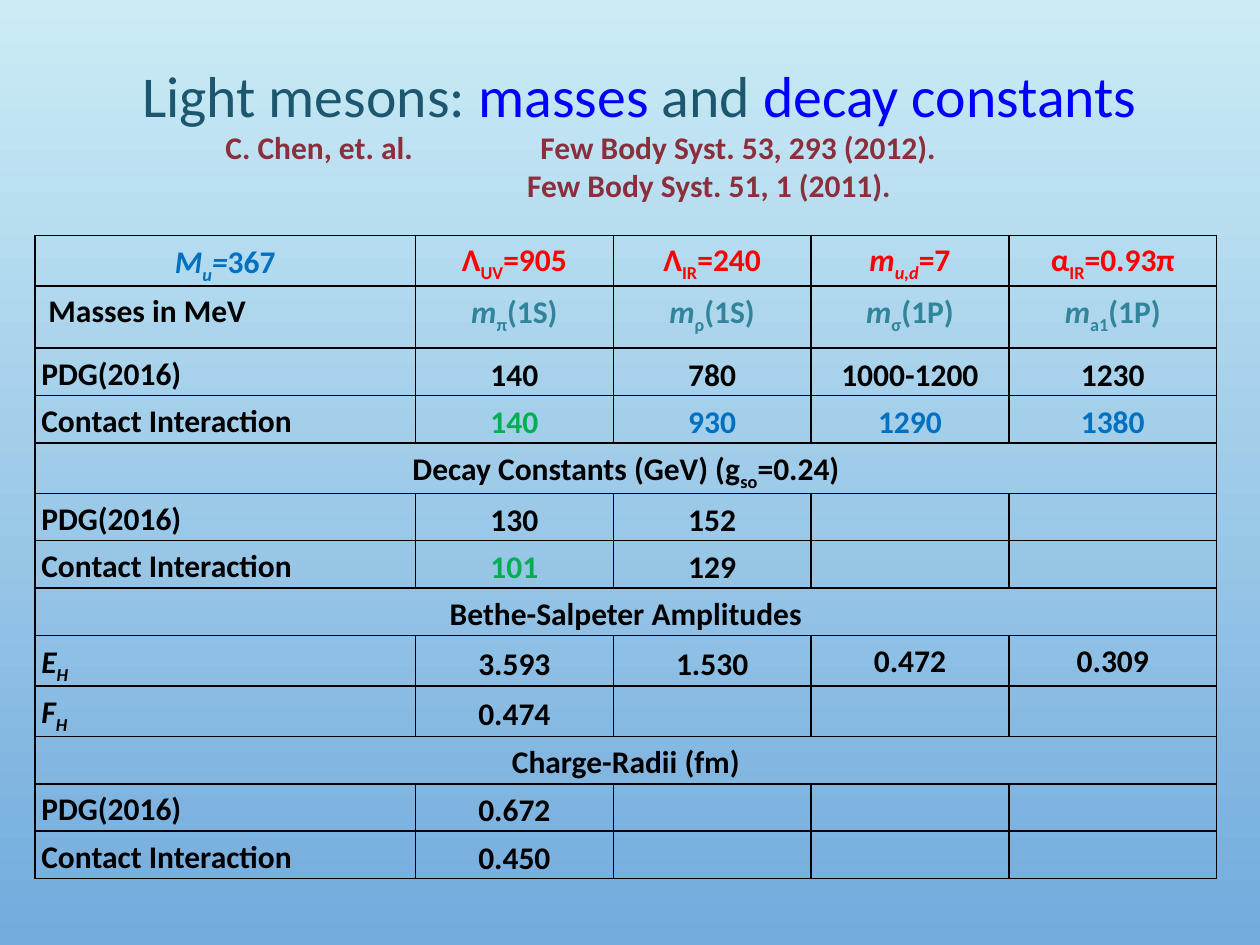
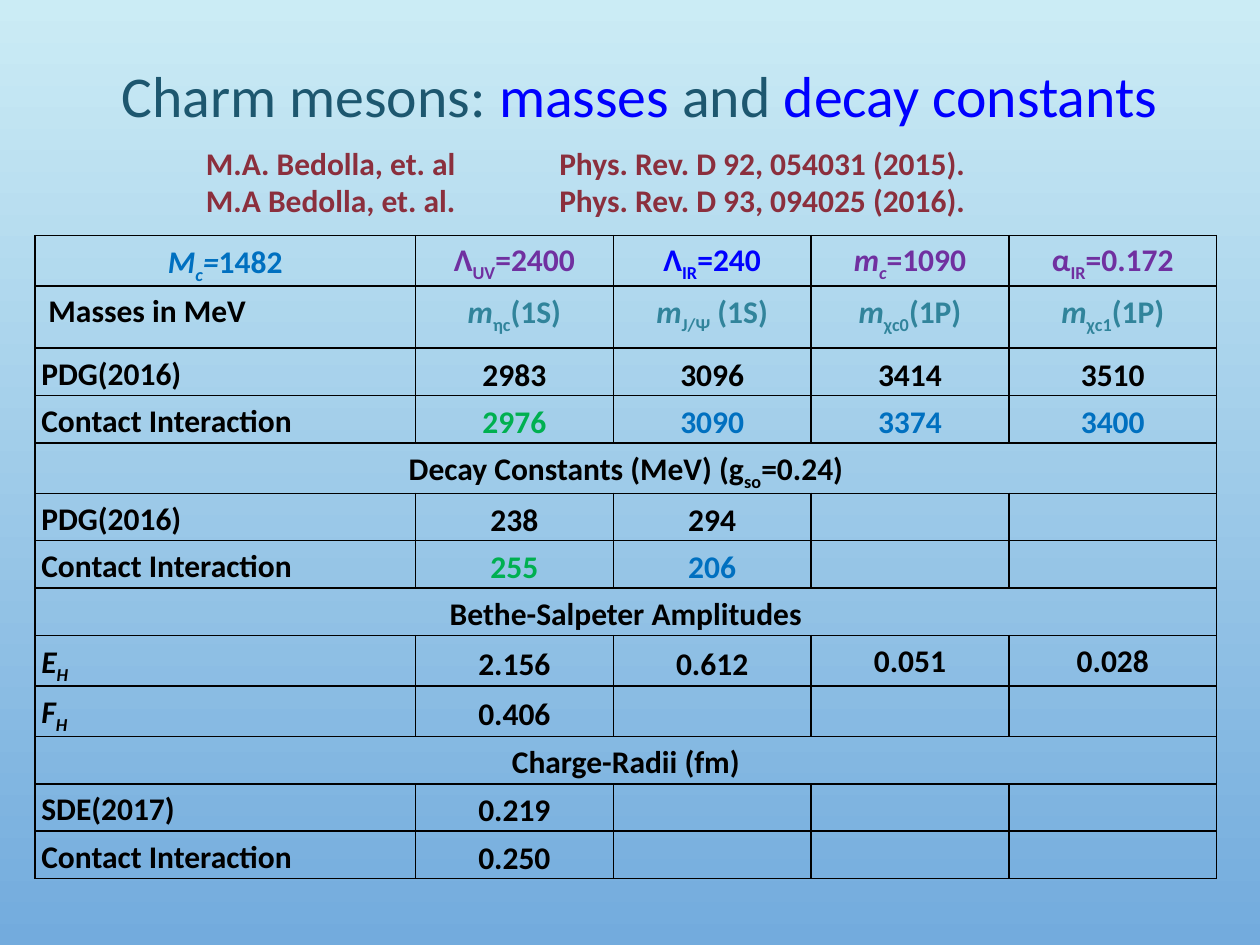
from itertools import zip_longest

from lxml.etree import SubElement
from pptx import Presentation
from pptx.dml.color import RGBColor
from pptx.enum.text import MSO_ANCHOR, MSO_AUTO_SIZE, PP_ALIGN
from pptx.oxml.ns import qn
from pptx.util import Pt

BLACK, BLUE, GREEN, TEAL = "000000", "0070C0", "00B050", "31849B"
RED, PURPLE, PURE_BLUE = "FF0000", "7030A0", "0000FF"
TITLE_INK, CITATION_INK = "1D576F", "8B2F3D"
SKY_STOPS = ("CBECF5", "73ABDD")
BODY = {"name": "Calibri", "size": Pt(18), "bold": True}
HEADING = {"name": "Calibri", "size": Pt(33), "bold": False}
COL_WIDTHS = (217.44, 113.04, 113.04, 113.04, 118.8)
ROW_HEIGHTS = (28.1, 35.5) + (27.1,) * 11
AMPLITUDE_ROW = 8

LIGHT = {
    "family": "Light",
    "citation_at": (121.7, 69.84),
    "citations": [
        ("C. Chen, et. al.", "Few Body Syst. 53, 293 (2012).", 180),
        ("", "Few Body Syst. 51, 1 (2011).", 172.5),
    ],
    "rows": [
        ["*M_u_=*367", "Λ_UV_=905", "Λ_IR_=240", "*m_u,d_*=7", "α_IR_=0.93π"],
        ["Masses in MeV", "*m*_π_(1S)", "*m*_ρ_(1S)", "*m*_σ_(1P)", "*m*_a1_(1P)"],
        ["PDG(2016)", "140", "780", "1000-1200", "1230"],
        ["Contact Interaction", "140", "930", "1290", "1380"],
        ["Decay Constants (GeV) (g_so_=0.24)"],
        ["PDG(2016)", "130", "152"],
        ["Contact Interaction", "101", "129"],
        ["Bethe-Salpeter Amplitudes"],
        ["*E_H_*", "3.593", "1.530", "0.472", "0.309"],
        ["*F_H_*", "0.474"],
        ["Charge-Radii (fm)"],
        ["PDG(2016)", "0.672"],
        ["Contact Interaction", "0.450"],
    ],
    "parameter_inks": [BLUE, RED, RED, RED, RED],
    "decay_inks": [BLACK, GREEN, BLACK],
}
CHARM = {
    "family": "Charm",
    "citation_at": (110.5, 78.48),
    "citations": [
        ("M.A. Bedolla, et. al", "Phys. Rev. D 92, 054031 (2015).", 202),
        ("M.A Bedolla, et. al.", "Phys. Rev. D 93, 094025 (2016).", 202),
    ],
    "rows": [
        ["*M_c_=*1482", "Λ_UV_=2400", "Λ_IR_=240", "*m_c_*=1090", "α_IR_=0.172"],
        ["Masses in MeV", "*m*_ηc_(1S)", "*m*_J/Ψ_ (1S)", "*m*_χc0_(1P)", "*m*_χc1_(1P)"],
        ["PDG(2016)", "2983", "3096", "3414", "3510"],
        ["Contact Interaction", "2976", "3090", "3374", "3400"],
        ["Decay Constants (MeV) (g_so_=0.24)"],
        ["PDG(2016)", "238", "294"],
        ["Contact Interaction", "255", "206"],
        ["Bethe-Salpeter Amplitudes"],
        ["*E_H_*", "2.156", "0.612", "0.051", "0.028"],
        ["*F_H_*", "0.406"],
        ["Charge-Radii (fm)"],
        ["SDE(2017)", "0.219"],
        ["Contact Interaction", "0.250"],
    ],
    "parameter_inks": [BLUE, PURPLE, PURE_BLUE, PURPLE, PURPLE],
    "decay_inks": [BLACK, GREEN, BLUE],
}


def rgb(value):
    """Turn a hex string into a colour."""
    return RGBColor.from_string(value)


def set_all(target, values):
    """Set every attribute in a dict of format values."""
    for name, value in values.items():
        setattr(target, name, value)


def add_run(p, text, ink, fmt):
    """Add a formatted run to a paragraph."""
    r = p.add_run()
    r.text = text
    set_all(r.font, fmt)
    r.font.color.rgb = rgb(ink)
    return r


def add_formula(p, text, ink):
    """Add text in which * toggles italics and _ toggles subscript."""
    for i, chunk in enumerate(text.split("*")):
        for j, piece in enumerate(chunk.split("_")):
            if piece:
                r = add_run(p, piece, ink, BODY | {"italic": i % 2 == 1})
                if j % 2:
                    r._r.get_or_add_rPr().set("baseline", "-25000")


def add_title(s, family):
    """Place the two-coloured slide title."""
    sp = s.shapes.title
    set_all(sp, {"left": Pt(29.5), "top": Pt(17.3), "width": Pt(671.8), "height": Pt(59.8)})
    tf = sp.text_frame
    set_all(tf, {"auto_size": MSO_AUTO_SIZE.NONE, "vertical_anchor": MSO_ANCHOR.BOTTOM})
    p = tf.paragraphs[0]
    p.alignment = PP_ALIGN.CENTER
    for text, ink in ((f"{family} mesons: ", TITLE_INK), ("masses", PURE_BLUE),
                      (" and ", TITLE_INK), ("decay constants", PURE_BLUE)):
        add_run(p, text, ink, HEADING)


def add_citations(s, at, citations):
    """Add authors and journal references aligned by tab stops."""
    left, top = at
    tf = s.shapes.add_textbox(Pt(left), Pt(top), Pt(580), Pt(52)).text_frame
    tf.word_wrap = True
    for i, (authors, reference, stop) in enumerate(citations):
        p = tf.add_paragraph() if i else tf.paragraphs[0]
        tabs = SubElement(p._p.get_or_add_pPr(), qn("a:tabLst"))
        SubElement(tabs, qn("a:tab"), pos=str(Pt(stop)), algn="l")
        add_run(p, f"{authors}\t{reference}", CITATION_INK, BODY)


def add_borders(cell):
    """Draw a thin black line on each side of a cell."""
    tcPr = cell._tc.get_or_add_tcPr()
    for side in ("lnL", "lnR", "lnT", "lnB"):
        ln = SubElement(tcPr, qn(f"a:{side}"), w=str(Pt(1)))
        SubElement(SubElement(ln, qn("a:solidFill")), qn("a:srgbClr"), val=BLACK)


def format_cell(cell, row, col):
    """Set the border, fill, margins and anchor of a cell."""
    add_borders(cell)
    cell.fill.background()
    parameter = row == 0 and col > 0
    side = 0 if parameter else 3.6
    indent = 4.1 if (row, col) == (1, 0) else 0
    raised = row == AMPLITUDE_ROW and col > 2
    middle = row > 1 and col > 0 and not raised
    set_all(cell, {
        "margin_left": Pt(side + indent),
        "margin_right": Pt(side),
        "margin_top": Pt(0 if parameter else 0.72),
        "margin_bottom": Pt(0),
        "vertical_anchor": MSO_ANCHOR.MIDDLE if middle else MSO_ANCHOR.TOP,
    })


def add_results(s, rows, inks):
    """Add the table of results, with one-entry rows as section bands."""
    frame = s.shapes.add_table(len(rows), len(COL_WIDTHS), Pt(20), Pt(134.6),
                               Pt(sum(COL_WIDTHS)), Pt(sum(ROW_HEIGHTS)))
    table = frame.table
    set_all(table, {"first_row": False, "horz_banding": False})
    for column, width in zip(table.columns, COL_WIDTHS):
        column.width = Pt(width)
    for i, (texts, height) in enumerate(zip(rows, ROW_HEIGHTS)):
        table.rows[i].height = Pt(height)
        section = len(texts) == 1
        row_inks = inks.get(i, [BLACK] * len(texts))
        for j, cell in enumerate(table.rows[i].cells):
            format_cell(cell, i, j)
        for j, (text, ink) in enumerate(zip_longest(texts, row_inks)):
            p = table.cell(i, j).text_frame.paragraphs[0]
            centred = j or section or i == 0
            set_all(p, {"line_spacing": 1.15,
                        "alignment": PP_ALIGN.CENTER if centred else PP_ALIGN.LEFT})
            add_formula(p, text, ink)
        if section:
            table.cell(i, 0).merge(table.cell(i, len(COL_WIDTHS) - 1))


def add_meson_slide(prs, meson):
    """Build the slide of one meson family."""
    s = prs.slides.add_slide(prs.slide_layouts[5])
    inks = {
        0: meson["parameter_inks"],
        1: [BLACK] + [TEAL] * 4,
        3: [BLACK, GREEN] + [BLUE] * 3,
        6: meson["decay_inks"],
    }
    add_results(s, meson["rows"], inks)
    add_citations(s, meson["citation_at"], meson["citations"])
    add_title(s, meson["family"])


def paint_background(prs):
    """Give the master a vertical sky gradient."""
    fill = prs.slide_master.background.fill
    fill.gradient()
    fill.gradient_angle = 270
    for stop, ink in zip(fill.gradient_stops, SKY_STOPS):
        stop.color.rgb = rgb(ink)


def main():
    """Build and save the presentation."""
    prs = Presentation()
    set_all(prs, {"slide_width": Pt(720), "slide_height": Pt(540)})
    paint_background(prs)
    for meson in (LIGHT, CHARM):
        add_meson_slide(prs, meson)
    prs.save("out.pptx")


if __name__ == "__main__":
    main()
